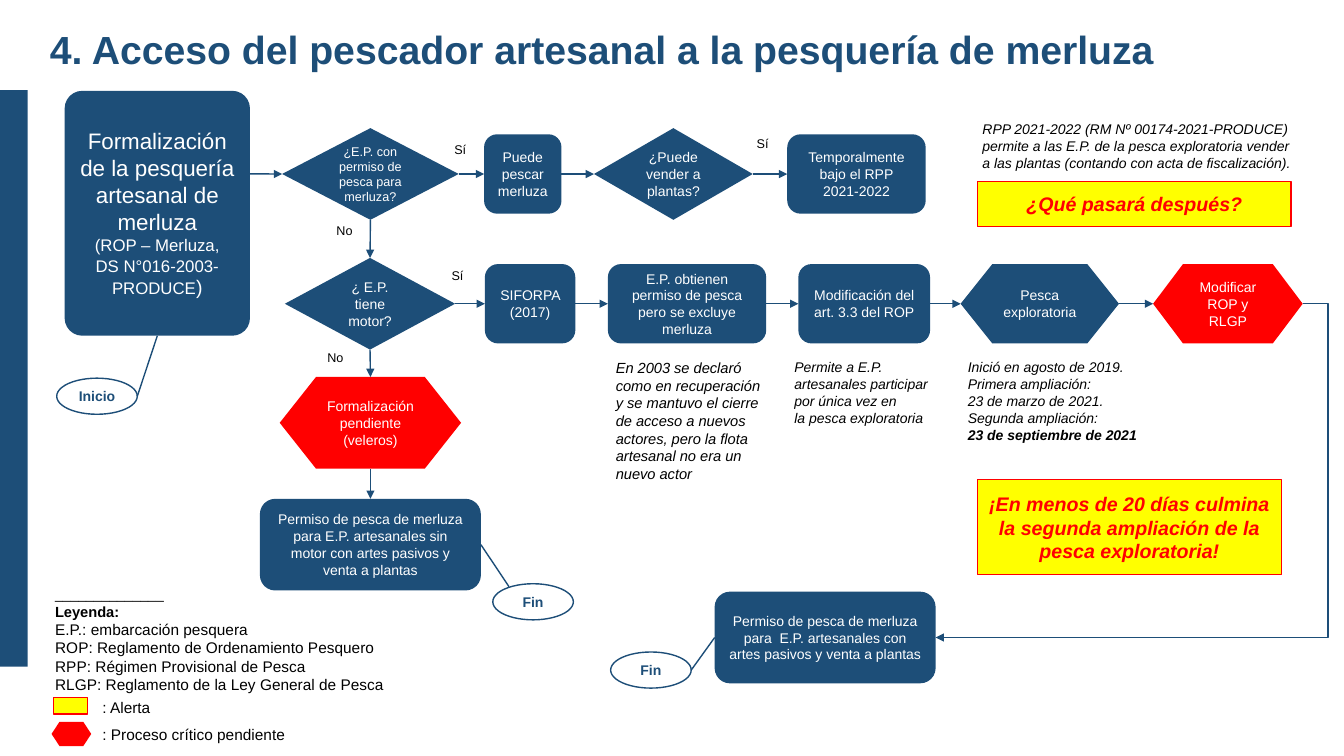
from dataclasses import dataclass

from lxml import etree
from pptx import Presentation
from pptx.dml import color
from pptx.enum import shapes, text
from pptx.oxml import ns
from pptx.util import Cm, Pt

KIND = shapes.MSO_SHAPE
TOP, LEFT, BOTTOM, RIGHT = range(4)


@dataclass(frozen=True)
class Theme:
    font: str = "Arial"
    blue: str = "1D4E78"
    red: str = "FF0000"
    yellow: str = "FFFF00"
    white: str = "FFFFFF"
    black: str = "000000"
    title: float = 28
    heading: float = 16
    alert: float = 14
    subheading: float = 12
    legend: float = 11
    remark: float = 10.5
    body: float = 10
    small: float = 9
    line: float = 1


THEME = Theme()


@dataclass(frozen=True)
class Box:
    left: float
    top: float
    width: float
    height: float

    def inside(self, left, top, width, height):
        return Box(self.left + left, self.top + top, width, height)

    def lengths(self):
        return Cm(self.left), Cm(self.top), Cm(self.width), Cm(self.height)


def rgb(value):
    return color.RGBColor.from_string(value)


def write(shape, lines, size, ink, align=None, bold=False, italic=False):
    frame = shape.text_frame
    frame.word_wrap = True
    frame.text = lines
    for paragraph in frame.paragraphs:
        paragraph.alignment = align
        for run in paragraph.runs:
            run.font.name = THEME.font
            run.font.size = Pt(size)
            run.font.bold = bold
            run.font.italic = italic
            run.font.color.rgb = rgb(ink)


def add_node(slide, kind, box, lines="", fill=THEME.blue, line=None, size=THEME.body,
             ink=THEME.white, bold=False, italic=False):
    shape = slide.shapes.add_shape(kind, *box.lengths())
    shape.shadow.inherit = False
    shape.fill.solid()
    shape.fill.fore_color.rgb = rgb(fill)
    if line:
        shape.line.color.rgb = rgb(line)
        shape.line.width = Pt(THEME.line)
    else:
        shape.line.fill.background()
    if lines:
        shape.text_frame.vertical_anchor = text.MSO_ANCHOR.MIDDLE
        write(shape, lines, size, ink, text.PP_ALIGN.CENTER, bold, italic)
    return shape


def add_text(slide, box, lines, size=THEME.body, italic=False):
    shape = slide.shapes.add_textbox(*box.lengths())
    write(shape, lines, size, THEME.black, italic=italic)
    return shape


def add_link(slide, end, end_site, begin=None, begin_site=RIGHT, point=(0, 0), arrow=True, bend=None):
    kind = shapes.MSO_CONNECTOR.STRAIGHT if bend is None else shapes.MSO_CONNECTOR.ELBOW
    start = [Cm(value) for value in point]
    link = slide.shapes.add_connector(kind, *start, *start)
    if begin is not None:
        link.begin_connect(begin, begin_site)
    link.end_connect(end, end_site)
    link.line.color.rgb = rgb(THEME.blue)
    link.line.width = Pt(THEME.line)
    properties = link._element.spPr
    if arrow:
        etree.SubElement(link.line._get_or_add_ln(), ns.qn("a:tailEnd"), type="triangle")
    etree.SubElement(properties, ns.qn("a:effectLst"))
    if bend is not None:
        guides = properties.find(ns.qn("a:prstGeom")).get_or_add_avLst()
        etree.SubElement(guides, ns.qn("a:gd"), name="adj1", fmla=f"val {bend}")
    return link


def add_title(slide, box, lines):
    title = slide.shapes.title
    title.left, title.top, title.width, title.height = box.lengths()
    title.text_frame.vertical_anchor = text.MSO_ANCHOR.TOP
    write(title, lines, THEME.title, THEME.blue, text.PP_ALIGN.LEFT, bold=True)


def add_terminal(slide, box, label, target, site, across=1, down=0.5):
    add_node(slide, KIND.OVAL, box, label, fill=THEME.white, line=THEME.blue, ink=THEME.blue, bold=True)
    point = (box.left + across * box.width, box.top + down * box.height)
    add_link(slide, target, site, point=point, arrow=False)


def add_start(slide, box):
    start = add_node(slide, KIND.ROUNDED_RECTANGLE, box,
                     "Formalización de la pesquería artesanal de merluza\v(ROP – Merluza,\nDS N°016-2003-PRODUCE",
                     size=THEME.subheading)
    start.adjustments[0] = 0.095
    first, second = start.text_frame.paragraphs
    first.runs[0].font.size = Pt(THEME.heading)
    bracket = second.add_run()
    bracket.text = ")"
    bracket.font.name = THEME.font
    bracket.font.size = Pt(THEME.alert)
    bracket.font.color.rgb = rgb(THEME.white)
    add_terminal(slide, box.inside(-0.2, 7.24, 2.03, 0.91), "Inicio", start, BOTTOM)


def add_flow_row(slide, box, steps, labels):
    nodes = []
    for kind, left, width, lines, fill, size in steps:
        height = box.height if kind == KIND.FLOWCHART_DECISION else 2
        place = box.inside(left, (box.height - height) / 2, width, height)
        node = add_node(slide, kind, place, lines, fill, size=size)
        if nodes:
            add_link(slide, node, LEFT, nodes[-1])
        nodes.append(node)
    for left, top, label in labels:
        add_text(slide, box.inside(left, top, 1.1, 0.64), label, THEME.small)
    return nodes


def add_sail_branch(slide, box, decision):
    pending = add_node(slide, KIND.FLOWCHART_PREPARATION, box.inside(0.5, 0, 4.57, 2.31),
                       "Formalización pendiente (veleros)", THEME.red)
    permit = add_node(slide, KIND.ROUNDED_RECTANGLE, box.inside(0, 3.07, 5.57, 2.31),
                      "Permiso de pesca de merluza para E.P. artesanales sin motor con artes pasivos y venta a plantas")
    add_link(slide, pending, TOP, decision, BOTTOM)
    add_link(slide, permit, TOP, pending, BOTTOM)
    add_terminal(slide, box.inside(5.87, 5.21, 2.03, 0.91), "Fin", permit, RIGHT, 0.2, 0.08)


def add_motor_end(slide, box, reform):
    permit = add_node(slide, KIND.ROUNDED_RECTANGLE, box.inside(2.62, 0, 5.57, 2.31),
                      "Permiso de pesca de merluza para  E.P. artesanales con artes pasivos y venta a plantas")
    add_link(slide, permit, RIGHT, reform, bend=-6900)
    add_terminal(slide, box.inside(0, 1.52, 2.03, 0.91), "Fin", permit, LEFT)


def add_notes(slide, box):
    add_text(slide, box.inside(0, 0, 4.22, 3.4),
             "En 2003 se declaró como en recuperación y se mantuvo el cierre de acceso a nuevos actores, "
             "pero la flota artesanal no era un nuevo actor", THEME.remark, True)
    add_text(slide, box.inside(4.5, 0, 4.32, 1.96),
             "Permite a E.P. artesanales participar por única vez en\nla pesca exploratoria", italic=True)
    dates = add_text(slide, box.inside(8.87, 0, 4.88, 2.39),
                     "Inició en agosto de 2019. Primera ampliación:\n23 de marzo de 2021.\n"
                     "Segunda ampliación:\n23 de septiembre de 2021", italic=True)
    dates.text_frame.paragraphs[-1].runs[0].font.bold = True


def add_alerts(slide, box):
    add_text(slide, box.inside(-0.13, 0, 8.31, 1.55),
             "RPP 2021-2022 (RM Nº 00174-2021-PRODUCE) permite a las E.P. de la pesca exploratoria vender "
             "a las plantas (contando con acta de fiscalización).", italic=True)
    for top, width, height, lines in (
        (1.65, 7.9, 1.14, "¿Qué pasará después?"),
        (9.17, 7.65, 2.39, "¡En menos de 20 días culmina la segunda ampliación de la pesca exploratoria!"),
    ):
        add_node(slide, KIND.RECTANGLE, box.inside(0, top, width, height), lines, THEME.yellow, THEME.red,
                 THEME.alert, THEME.red, bold=True, italic=True)


def add_legend(slide, box):
    legend = add_text(slide, box,
                      "______________\nLeyenda:\nE.P.: embarcación pesquera\n"
                      "ROP: Reglamento de Ordenamiento Pesquero\nRPP: Régimen Provisional de Pesca\n"
                      "RLGP: Reglamento de la Ley General de Pesca\n: Alerta\n: Proceso crítico pendiente", THEME.legend)
    paragraphs = legend.text_frame.paragraphs
    paragraphs[0].runs[0].font.size = Pt(THEME.body)
    paragraphs[1].runs[0].font.size = Pt(THEME.remark)
    paragraphs[1].runs[0].font.bold = True
    for paragraph, space in zip(paragraphs[-2:], (3, 6)):
        paragraph.space_before = Pt(space)
        paragraph._p.get_or_add_pPr().set("marL", str(Cm(1.19)))
    add_node(slide, KIND.RECTANGLE, box.inside(0.21, 2.95, 0.86, 0.41), fill=THEME.yellow, line=THEME.red)
    add_node(slide, KIND.FLOWCHART_PREPARATION, box.inside(0.16, 3.56, 1, 0.61), fill=THEME.red)


def main():
    presentation = Presentation()
    presentation.slide_width, presentation.slide_height = Cm(33.87), Cm(19.05)
    slide = presentation.slides.add_slide(presentation.slide_layouts[5])
    decision, process = KIND.FLOWCHART_DECISION, KIND.FLOWCHART_ALTERNATE_PROCESS
    hexagon = KIND.FLOWCHART_PREPARATION
    normal = (THEME.blue, THEME.body)

    add_title(slide, Box(1, 0.5, 28.68, 1.45), "4. Acceso del pescador artesanal a la pesquería de merluza")
    add_node(slide, KIND.RECTANGLE, Box(0, 2.27, 0.7, 14.53))
    add_start(slide, Box(1.63, 2.29, 4.67, 6.17))
    permit_row = add_flow_row(slide, Box(7.11, 3.23, 16.22, 2.31), (
        (decision, 0, 4.45, "¿E.P. con permiso de pesca para merluza?", THEME.blue, THEME.small),
        (process, 5.09, 1.95, "Puede pescar merluza", *normal),
        (decision, 7.86, 4, "¿Puede vender a plantas?", *normal),
        (process, 12.73, 3.49, "Temporalmente bajo el RPP\n2021-2022", *normal),
    ), ((4.09, 0.22, "Sí"), (1.12, 2.26, "No"), (11.71, 0.07, "Sí")))
    motor_row = add_flow_row(slide, Box(7.18, 6.5, 25.65, 2.31), (
        (decision, 0, 4.29, "¿ E.P. tiene motor?", *normal),
        (process, 5.04, 2.28, "SIFORPA (2017)", *normal),
        (process, 8.14, 3.99, "E.P. obtienen permiso de pesca pero se excluye merluza", *normal),
        (process, 12.94, 3.32, "Modificación del art. 3.3 del ROP", *normal),
        (hexagon, 17.03, 3.99, "Pesca exploratoria", *normal),
        (hexagon, 21.88, 3.77, "Modificar ROP y RLGP", THEME.red, THEME.body),
    ), ((3.95, 0.13, "Sí"), (0.82, 2.19, "No")))
    add_link(slide, permit_row[0], LEFT, point=(6.3, 4.38))
    add_link(slide, motor_row[0], TOP, permit_row[0], BOTTOM)
    add_sail_branch(slide, Box(6.55, 9.5, 7.9, 6.12), motor_row[0])
    add_motor_end(slide, Box(15.39, 14.91, 8.19, 2.43), motor_row[-1])
    add_notes(slide, Box(15.27, 8.92, 13.75, 3.4))
    add_alerts(slide, Box(24.64, 2.92, 8.18, 11.56))
    add_legend(slide, Box(1.14, 14.63, 8.94, 4.27))
    presentation.save("out.pptx")


if __name__ == "__main__":
    main()
